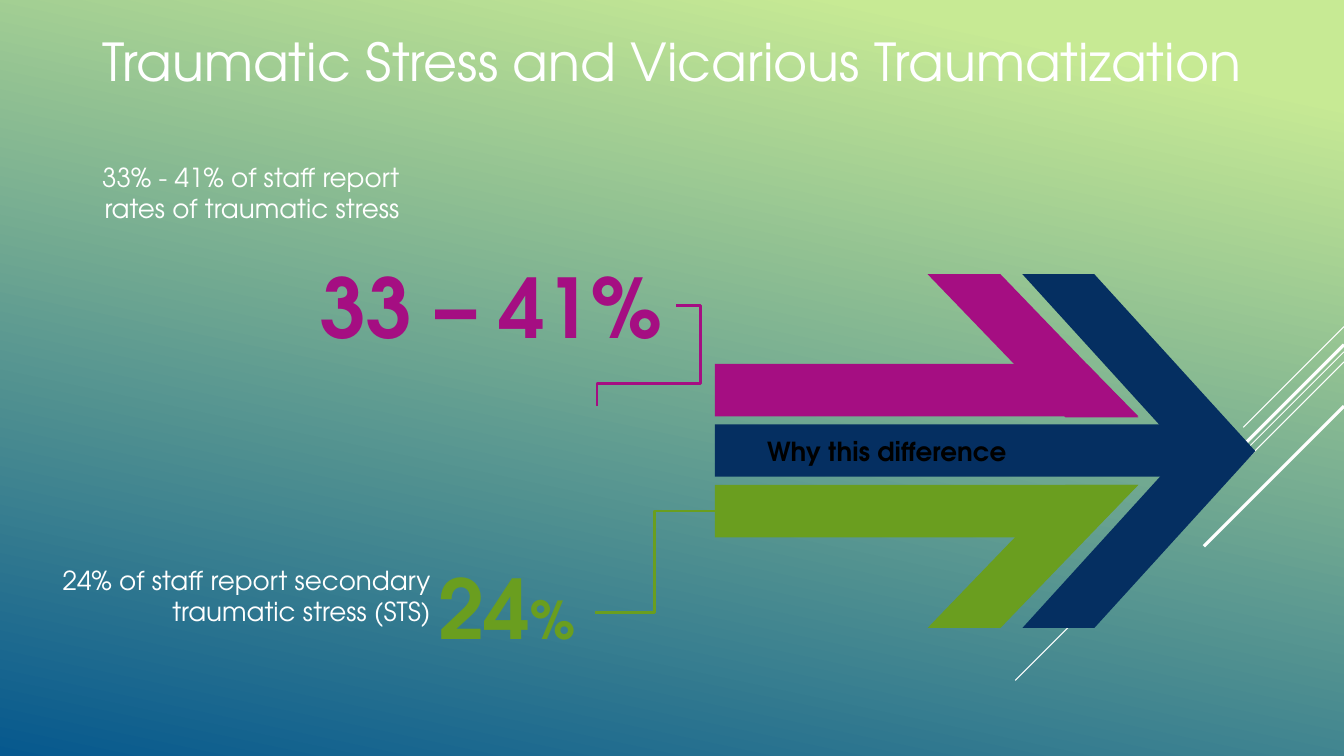
from lxml.etree import SubElement
from pptx import Presentation
from pptx.dml.color import RGBColor
from pptx.enum.shapes import MSO_CONNECTOR as Link, MSO_SHAPE as Preset
from pptx.enum.text import MSO_ANCHOR as Anchor, PP_ALIGN as Align
from pptx.oxml.ns import qn
from pptx.util import Inches, Pt

WHITE = RGBColor(0xFF, 0xFF, 0xFF)
BLACK = RGBColor(0, 0, 0)
NAVY = RGBColor(0x05, 0x2F, 0x61)
GREEN = RGBColor(0x6A, 0x9E, 0x1F)
PURPLE = RGBColor(0xA5, 0x0E, 0x82)
LIME = RGBColor(0xC7, 0xEA, 0x94)
BLUE = RGBColor(0x06, 0x58, 0x8E)

WIDTH, HEIGHT = 13.33, 7.5
SHAFT_LEFT, SHAFT_HEIGHT = 7.09, 0.52


class SlideBuilder:
    font = "TeX Gyre Adventor"

    def __init__(self, page):
        self.page = page

    def background(self, start, end, angle):
        fill = self.page.background.fill
        fill.gradient()
        fill.gradient_angle = angle
        for stop, (position, color) in zip(fill.gradient_stops, (start, end)):
            stop.position = position
            stop.color.rgb = color

    def paint(self, shape, color):
        shape.shadow.inherit = False
        shape.fill.solid()
        shape.fill.fore_color.rgb = color
        shape.line.fill.background()

    def shape(self, preset, left, top, width, height, color, adjust=None, mirrored=False):
        shape = self.page.shapes.add_shape(
            preset, Inches(left), Inches(top), Inches(width), Inches(height))
        if adjust is not None:
            shape.adjustments[0] = adjust
        if mirrored:
            shape._element.spPr.xfrm.set("flipH", "1")
        self.paint(shape, color)

    def polygon(self, points, color):
        corners = [(Inches(x), Inches(y)) for x, y in points]
        builder = self.page.shapes.build_freeform(*corners[0])
        builder.add_line_segments(corners[1:], close=True)
        self.paint(builder.convert_to_shape(), color)

    def line(self, kind, start, end, color, weight):
        ends = [Inches(value) for value in (*start, *end)]
        line = self.page.shapes.add_connector(kind, *ends)
        line.line.color.rgb = color
        line.line.width = Pt(weight)
        SubElement(line._element.spPr, qn("a:effectLst"))
        return line

    def four_part_elbow(self, start, end, color, weight, bends):
        """Draw an elbow with two adjustable bends, turned by a quarter."""
        properties = self.line(Link.ELBOW, start, end, color, weight)._element.spPr
        properties.xfrm.set("rot", "5400000")
        geometry = properties.find(qn("a:prstGeom"))
        geometry.set("prst", "bentConnector4")
        guides = geometry.find(qn("a:avLst"))
        if guides is None:
            guides = SubElement(geometry, qn("a:avLst"))
        for number, bend in enumerate(bends, 1):
            SubElement(guides, qn("a:gd"), name=f"adj{number}",
                       fmla=f"val {round(bend * 100000)}")

    def text(self, spans, left, top, width, height, color, bold=False,
             align=Align.LEFT, anchor=Anchor.TOP, wrap=True):
        """Add one paragraph of (words, size) spans."""
        box = self.page.shapes.add_textbox(
            Inches(left), Inches(top), Inches(width), Inches(height))
        frame = box.text_frame
        frame.word_wrap = wrap
        frame.vertical_anchor = anchor
        para = frame.paragraphs[0]
        para.alignment = align
        for words, size in spans:
            span = para.add_run()
            span.text = words
            span.font.name = self.font
            span.font.size = Pt(size)
            span.font.bold = bold
            span.font.color.rgb = color


def main():
    deck = Presentation()
    deck.slide_width, deck.slide_height = Inches(WIDTH), Inches(HEIGHT)
    slide = SlideBuilder(deck.slides.add_slide(deck.slide_layouts[6]))
    slide.background((0.1, LIME), (1, BLUE), 258)

    # Diagonal rays from the right edge: top, run, weight
    for top, run, weight in ((3.24, 1, 0.75), (3.49, 3.26, 0.75), (3.59, 2.07, 0.75),
                             (3.42, 1.91, 2.25), (4.03, 1.39, 2.25)):
        slide.line(Link.STRAIGHT, (WIDTH, top), (WIDTH - run, top + run), WHITE, weight)

    slide.text([("Traumatic Stress and Vicarious Traumatization", 37.3)],
               0, 0.18, WIDTH, 0.84, WHITE, align=Align.CENTER, anchor=Anchor.MIDDLE)

    # Three-part arrow
    slide.shape(Preset.RECTANGLE, SHAFT_LEFT, 4.21, 4.79, SHAFT_HEIGHT, NAVY)
    slide.shape(Preset.CHEVRON, 10.14, 2.72, 2.31, 3.51, NAVY, 0.691)
    for inner, outer, wing_top, color, mirrored in (
            (4.81, 4.81 + SHAFT_HEIGHT, 4.81, GREEN, False),
            (4.13, 4.13 - SHAFT_HEIGHT, 2.72, PURPLE, True)):
        slide.polygon([(SHAFT_LEFT, inner), (11.29, inner),
                       (10.78, outer), (SHAFT_LEFT, outer)], color)
        slide.shape(Preset.PARALLELOGRAM, 9.2, wing_top, 2.09, 1.42, color, 0.963, mirrored)

    slide.text([("33% - 41% of staff report rates of traumatic stress", 18.7)],
               0.37, 1.55, 3.69, 0.73, WHITE, align=Align.RIGHT)
    slide.text([("Why this difference", 18.7)], 7.51, 4.27, 2.72, 0.42, BLACK, bold=True)
    slide.text([("24% of staff report secondary traumatic stress (STS)", 18.7)],
               0.26, 5.55, 4.11, 0.73, WHITE, align=Align.RIGHT)
    slide.text([("33 – 41%", 58.7)], 3.08, 2.49, 3.63, 1.09, PURPLE, bold=True, wrap=False)
    slide.text([("24", 58.7), ("%", 37.3)], 4.25, 5.48, 1.57, 1.09, GREEN,
               bold=True, wrap=False)

    slide.four_part_elbow((6.81, 3.92), (5.81, 3.14), PURPLE, 2, (0.228, 1.319))
    slide.line(Link.ELBOW, (SHAFT_LEFT, 5.07), (5.9, 6.08), GREEN, 2)
    deck.save("out.pptx")


if __name__ == "__main__":
    main()
